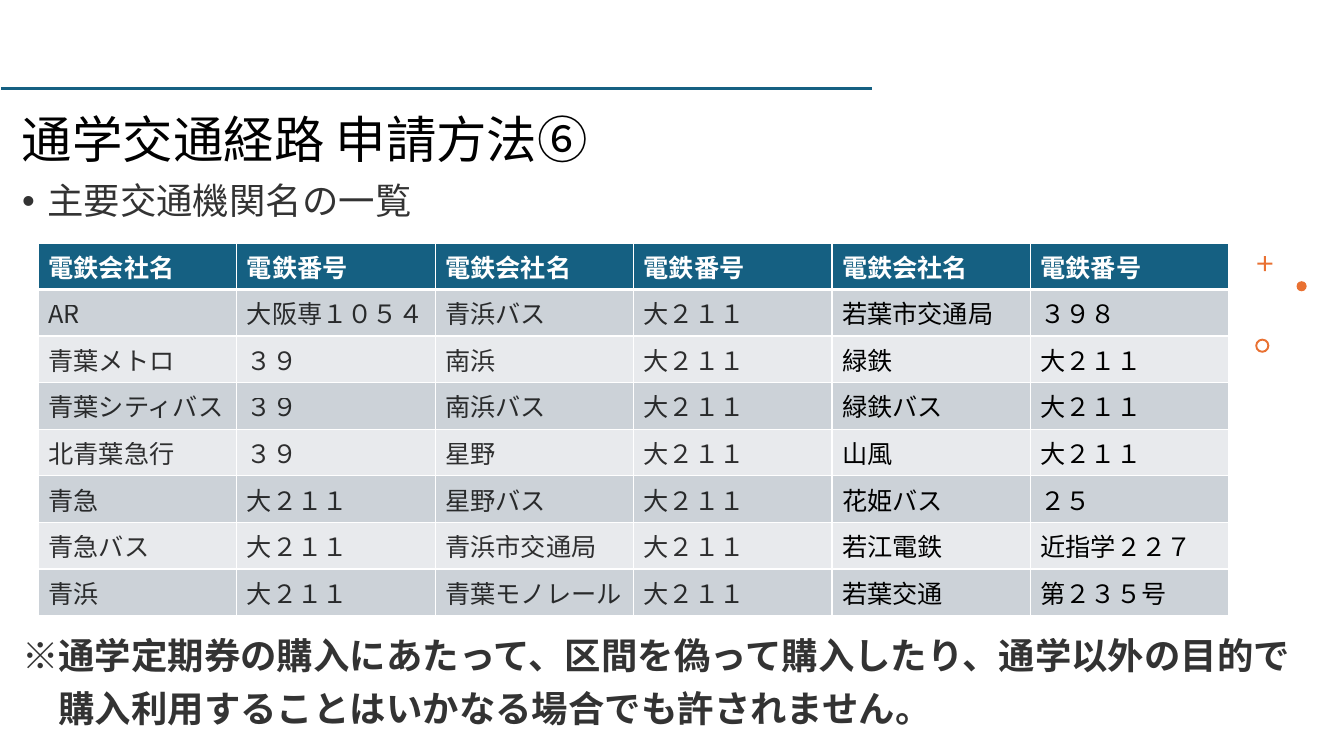
from pptx import Presentation
from pptx.util import Inches, Pt
from pptx.dml.color import RGBColor
from pptx.enum.shapes import MSO_SHAPE, MSO_CONNECTOR
from pptx.enum.text import MSO_ANCHOR
from pptx.oxml import parse_xml
from pptx.oxml.ns import nsdecls, qn
from lxml.etree import SubElement

FONT = "Noto Sans CJK JP"
BLACK = RGBColor(0x00, 0x00, 0x00)
WHITE = RGBColor(0xFF, 0xFF, 0xFF)
TEAL = RGBColor(0x15, 0x60, 0x82)
ORANGE = RGBColor(0xE9, 0x71, 0x32)
BANDS = [RGBColor(0xCC, 0xD2, 0xD8), RGBColor(0xE8, 0xEA, 0xED)]


def add_run(p, text, size, color=BLACK, bold=False, alpha=None):
    r = p.add_run()
    r.text = text
    r.font.size, r.font.bold, r.font.name = Pt(size), bold, FONT
    r.font.color.rgb = color
    if alpha:
        clr = r.font._element.find(qn("a:solidFill"))[0]
        SubElement(clr, qn("a:alpha"), val=str(alpha * 1000))
    r.font._element.find(qn("a:latin")).addnext(
        parse_xml(f'<a:ea {nsdecls("a")} typeface="{FONT}"/>'))


def add_text_box(left, top, width, height, anchor=MSO_ANCHOR.TOP):
    tf = s.shapes.add_textbox(
        Inches(left), Inches(top), Inches(width), Inches(height)).text_frame
    tf.word_wrap = True
    tf.vertical_anchor = anchor
    tf.paragraphs[0].line_spacing = 0.9
    return tf


prs = Presentation()
prs.slide_width, prs.slide_height = Inches(13.33), Inches(7.5)
s = prs.slides.add_slide(prs.slide_layouts[6])

# Title and rule
tf = add_text_box(0.12, 0.44, 11.54, 1.29, MSO_ANCHOR.BOTTOM)
add_run(tf.paragraphs[0], "通学交通経路 申請方法⑥", 36)
rule = s.shapes.add_connector(
    MSO_CONNECTOR.STRAIGHT, Inches(0.01), Inches(0.88), Inches(8.65), Inches(0.88))
rule.line.color.rgb = TEAL
rule.line.width = Pt(2)
SubElement(rule._element.spPr, qn("a:effectLst"))

# Bullet heading
p = add_text_box(0.12, 1.77, 12.85, 0.6).paragraphs[0]
pPr = p._p.get_or_add_pPr()
pPr.set("marL", str(Inches(0.25)))
pPr.set("indent", str(-Inches(0.25)))
SubElement(pPr, qn("a:buFont"), typeface="Arial")
SubElement(pPr, qn("a:buChar"), char="•")
add_run(p, "主要交通機関名の一覧", 26, alpha=80)

# Table of operators and their numbers
rows = [
    ["電鉄会社名", "電鉄番号"] * 3,
    ["AR", "大阪専１０５４", "青浜バス", "大２１１", "若葉市交通局", "３９８"],
    ["青葉メトロ", "３９", "南浜", "大２１１", "緑鉄", "大２１１"],
    ["青葉シティバス", "３９", "南浜バス", "大２１１", "緑鉄バス", "大２１１"],
    ["北青葉急行", "３９", "星野", "大２１１", "山風", "大２１１"],
    ["青急", "大２１１", "星野バス", "大２１１", "花姫バス", "２５"],
    ["青急バス", "大２１１", "青浜市交通局", "大２１１", "若江電鉄", "近指学２２７"],
    ["青浜", "大２１１", "青葉モノレール", "大２１１", "若葉交通", "第２３５号"],
]
table = s.shapes.add_table(len(rows), 6, Inches(0.38), Inches(2.41),
                           Inches(11.81), Inches(3.7)).table
for col in table.columns:
    col.width = Inches(11.81 / 6)
for i, row in enumerate(rows):
    table.rows[i].height = Inches(3.7 / len(rows))
    for j, text in enumerate(row):
        cell = table.cell(i, j)
        p = cell.text_frame.paragraphs[0]
        if i == 0:
            add_run(p, text, 18, WHITE, bold=True)
        else:
            add_run(p, text, 18, alpha=80 if j < 4 else None)
        tcPr = cell._tc.get_or_add_tcPr()
        for side in ("L", "R", "T", "B"):
            thick = (i, side) in ((0, "B"), (1, "T"))
            tcPr.append(parse_xml(
                f'<a:ln{side} {nsdecls("a")} w="{Pt(3 if thick else 1)}"><a:solidFill>'
                f'<a:srgbClr val="{WHITE}"/></a:solidFill></a:ln{side}>'))
        cell.fill.solid()
        cell.fill.fore_color.rgb = BANDS[(i - 1) % 2] if i else TEAL

# Warning, second line aligned after the mark
tf = add_text_box(0.12, 6.28, 13.05, 1.17)
add_run(tf.paragraphs[0],
        "※通学定期券の購入にあたって、区間を偽って購入したり、通学以外の目的で",
        26, bold=True, alpha=80)
p = tf.add_paragraph()
p.line_spacing = 0.9
p.space_before = Pt(10)
p._p.get_or_add_pPr().set("marL", str(Pt(26)))
add_run(p, "購入利用することはいかなる場合でも許されません。", 26, bold=True, alpha=80)

# Ornaments: plus, dot and ring
for kind, left, top, size, adjust in [
    (MSO_SHAPE.CROSS, 12.47, 2.54, 0.15, 0.44),
    (MSO_SHAPE.OVAL, 12.86, 2.79, 0.1, None),
    (MSO_SHAPE.DONUT, 12.45, 3.36, 0.14, 0.14),
]:
    sp = s.shapes.add_shape(kind, Inches(left), Inches(top), Inches(size), Inches(size))
    sp.shadow.inherit = False
    sp.fill.solid()
    sp.fill.fore_color.rgb = ORANGE
    sp.line.fill.background()
    if adjust:
        sp.adjustments[0] = adjust

prs.save("out.pptx")
